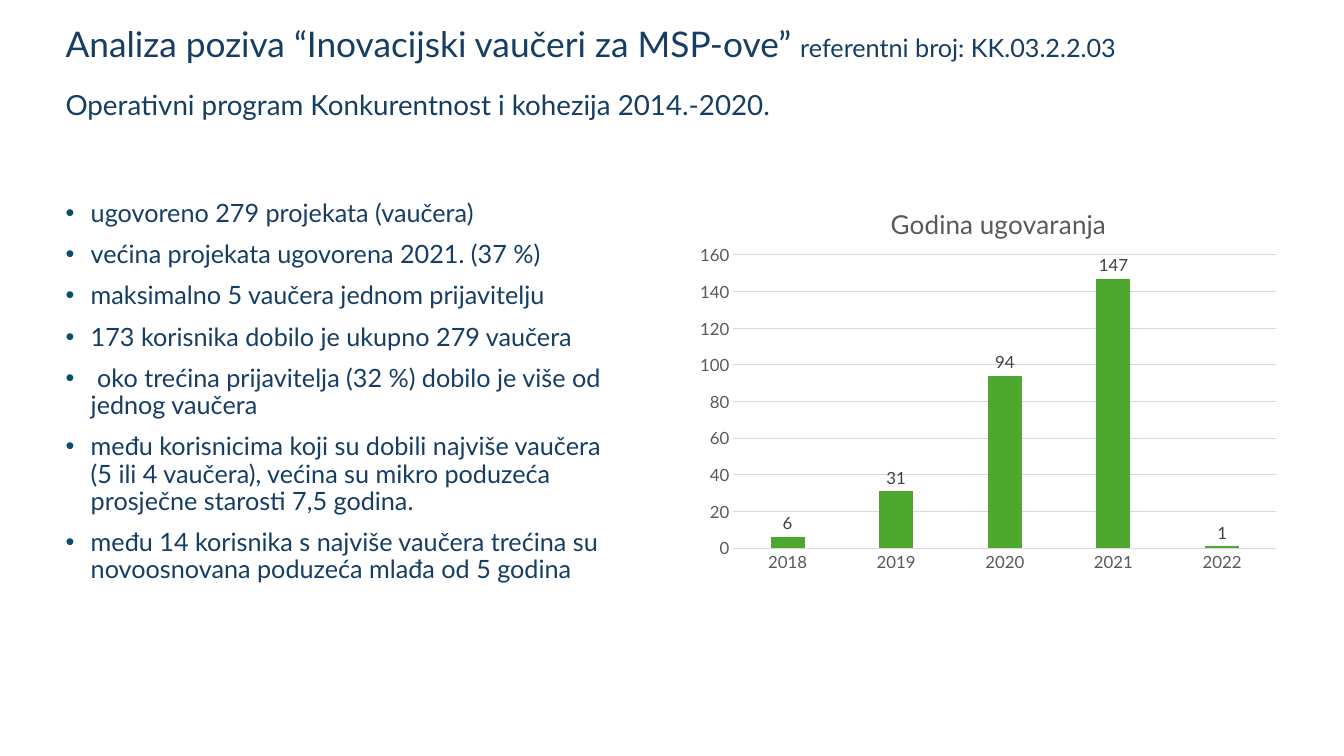
from dataclasses import dataclass

from lxml.etree import SubElement
from pptx import Presentation
from pptx.chart.data import CategoryChartData
from pptx.dml.color import RGBColor
from pptx.enum.chart import XL_CHART_TYPE as ChartType
from pptx.enum.chart import XL_LABEL_POSITION as LabelPosition
from pptx.enum.chart import XL_TICK_MARK as TickMark
from pptx.enum.text import MSO_ANCHOR as Anchor
from pptx.enum.text import MSO_AUTO_SIZE as AutoSize
from pptx.enum.text import PP_ALIGN as Align
from pptx.oxml.ns import qn
from pptx.util import Inches, Pt

FONT = "Lato"
COLORS = {
    "text": "163E64",
    "bullet": "084F6A",
    "bar": "4EA72E",
    "axis": "595959",
    "grid": "D9D9D9",
    "label": "404040",
}


@dataclass
class Box:
    left: float
    top: float
    width: float
    height: float

    def lengths(self) -> list:
        return [Inches(n) for n in (self.left, self.top, self.width, self.height)]


@dataclass
class Phrase:
    text: str
    size: float


TITLE_BOX = Box(0.55, 0.22, 11.85, 1.31)
BODY_BOX = Box(0.55, 1.94, 5.76, 4.39)
CHART_BOX = Box(6.82, 1.75, 5.96, 4)

TITLE_LINES = [
    [
        Phrase("Analiza poziva “Inovacijski vaučeri za MSP-ove” ", 25.2),
        Phrase("referentni broj: KK.03.2.2.03", 18),
    ],
    [Phrase("Operativni program Konkurentnost i kohezija 2014.-2020.", 19.8)],
]
FINDINGS = [
    "ugovoreno 279 projekata (vaučera)",
    "većina projekata ugovorena 2021. (37 %)",
    "maksimalno 5 vaučera jednom prijavitelju",
    "173 korisnika dobilo je ukupno 279 vaučera",
    " oko trećina prijavitelja (32 %) dobilo je više od jednog vaučera",
    "među korisnicima koji su dobili najviše vaučera (5 ili 4 vaučera), "
    "većina su mikro poduzeća prosječne starosti 7,5 godina.",
    "među 14 korisnika s najviše vaučera trećina su novoosnovana poduzeća "
    "mlađa od 5 godina",
]
CONTRACTS = {"2018": 6, "2019": 31, "2020": 94, "2021": 147, "2022": 1}


def color(name: str) -> RGBColor:
    return RGBColor.from_string(COLORS[name])


def style_font(font, size: float, color_name: str) -> None:
    font.name = FONT
    font.size = Pt(size)
    font.bold = False
    font.color.rgb = color(color_name)


def prepare_placeholder(shape, box: Box):
    shape.left, shape.top, shape.width, shape.height = box.lengths()
    frame = shape.text_frame
    frame.word_wrap = True
    frame.auto_size = AutoSize.NONE
    frame.vertical_anchor = Anchor.TOP
    return frame


def format_paragraph(paragraph, space_before: float) -> None:
    paragraph.alignment = Align.LEFT
    paragraph.line_spacing = 0.9
    paragraph.space_before = Pt(space_before)


def add_bullet(paragraph) -> None:
    properties = paragraph._p.get_or_add_pPr()
    properties.set("marL", str(Inches(0.25)))
    properties.set("indent", str(Inches(-0.25)))
    bullet_color = SubElement(properties, qn("a:buClr"))
    SubElement(bullet_color, qn("a:srgbClr"), val=COLORS["bullet"])
    SubElement(properties, qn("a:buFont"), typeface="Arial")
    SubElement(properties, qn("a:buChar"), char="•")


def fill_title(shape) -> None:
    frame = prepare_placeholder(shape, TITLE_BOX)
    for index, phrases in enumerate(TITLE_LINES):
        paragraph = frame.add_paragraph() if index else frame.paragraphs[0]
        format_paragraph(paragraph, 19 if index else 0)
        for phrase in phrases:
            run = paragraph.add_run()
            run.text = phrase.text
            style_font(run.font, phrase.size, "text")


def fill_body(shape) -> None:
    frame = prepare_placeholder(shape, BODY_BOX)
    frame.text = "\n".join(FINDINGS)
    for index, paragraph in enumerate(frame.paragraphs):
        format_paragraph(paragraph, 10 if index else 0)
        add_bullet(paragraph)
        for run in paragraph.runs:
            style_font(run.font, 18, "text")


def set_layout(element, index: int, **fractions: float) -> None:
    """Place a chart part by fractions of the chart's size."""
    for previous in element.findall(qn("c:layout")):
        element.remove(previous)
    layout = SubElement(element, qn("c:layout"))
    element.insert(index, layout)
    manual = SubElement(layout, qn("c:manualLayout"))
    if "w" in fractions:
        SubElement(manual, qn("c:layoutTarget"), val="inner")
    for mode in ("xMode", "yMode"):
        SubElement(manual, qn(f"c:{mode}"), val="edge")
    for name, fraction in fractions.items():
        SubElement(manual, qn(f"c:{name}"), val=str(fraction))


def add_contract_chart(slide) -> None:
    data = CategoryChartData()
    data.categories = list(CONTRACTS)
    data.add_series("Godina ugovaranja", list(CONTRACTS.values()))
    frame = slide.shapes.add_chart(
        ChartType.COLUMN_CLUSTERED, *CHART_BOX.lengths(), data
    )
    chart = frame.chart
    chart.has_legend = False
    style_font(chart.font, 12, "axis")

    # Chart title
    chart.has_title = True
    title = chart.chart_title
    title.text_frame.text = "Godina ugovaranja"
    style_font(title.text_frame.paragraphs[0].runs[0].font, 18.6, "axis")
    title.include_in_layout = False
    set_layout(title._element, 1, x=0.33, y=0.06)
    set_layout(chart._chartSpace.chart.plotArea, 0, x=0.076, y=0.195, w=0.904, h=0.727)

    # Axes
    years, counts = chart.category_axis, chart.value_axis
    for axis in (years, counts):
        axis.major_tick_mark = axis.minor_tick_mark = TickMark.NONE
        style_font(axis.tick_labels.font, 12, "axis")
    counts.minimum_scale, counts.maximum_scale, counts.major_unit = 0, 160, 20
    counts.format.line.fill.background()
    counts.has_major_gridlines = True
    for line in (years.format.line, counts.major_gridlines.format.line):
        line.color.rgb = color("grid")
        line.width = Pt(0.75)

    # Columns and their values
    plot = chart.plots[0]
    plot.gap_width, plot.overlap = 219, -27
    plot.vary_by_categories = False
    series = plot.series[0]
    series.format.fill.solid()
    series.format.fill.fore_color.rgb = color("bar")
    labels = series.data_labels
    labels.show_value = True
    labels.position = LabelPosition.OUTSIDE_END
    style_font(labels.font, 12, "label")


def main() -> None:
    presentation = Presentation()
    presentation.slide_width = Inches(13.33)
    presentation.slide_height = Inches(7.5)
    slide = presentation.slides.add_slide(presentation.slide_layouts[1])
    fill_title(slide.shapes.title)
    fill_body(slide.placeholders[1])
    add_contract_chart(slide)
    presentation.save("out.pptx")


if __name__ == "__main__":
    main()
